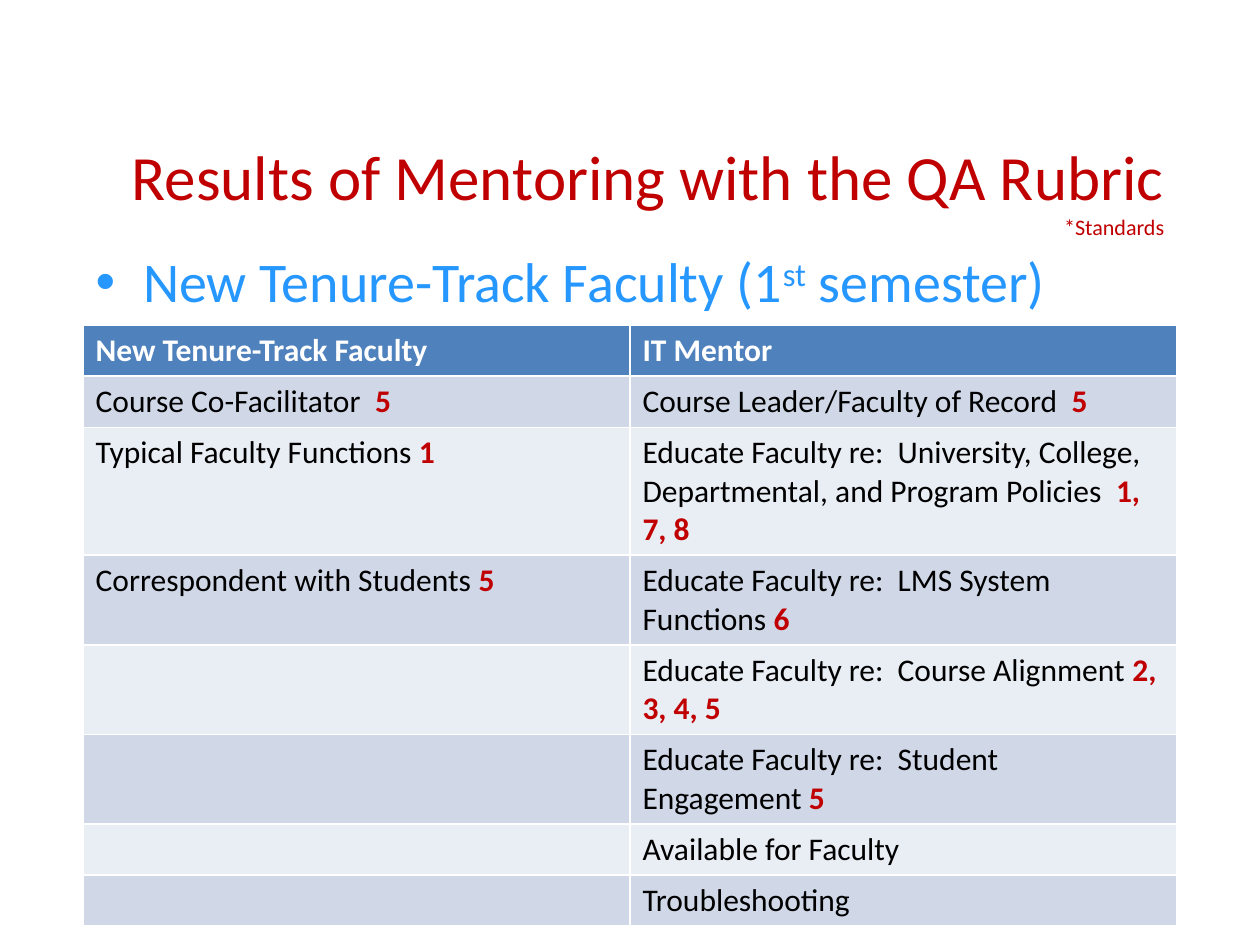
import dataclasses

import pptx
import pptx.dml.color
import pptx.enum.text
import pptx.oxml.ns
import pptx.util
from lxml import etree

Inches = pptx.util.Inches


@dataclasses.dataclass(frozen=True)
class Theme:
    """Colours, font and type sizes of the slide."""

    font: str = "Calibri"
    accent: str = "C00000"
    bullet: str = "2597FF"
    header: str = "4F81BD"
    header_text: str = "FFFFFF"
    text: str = "000000"
    bands: tuple = ("D0D8E8", "E9EDF4")
    title_size: float = 36
    note_size: float = 12.6
    body_size: float = 32
    table_size: float = 18


def add_text(para, text, *, font, size, color, bold=False, baseline=0):
    """Add one formatted span to a paragraph."""
    span = para.add_run()
    span.text = text
    span.font.name = font
    span.font.size = pptx.util.Pt(size)
    span.font.bold = bold
    span.font.color.rgb = pptx.dml.color.RGBColor.from_string(color)
    if baseline:
        span.font._element.set("baseline", str(baseline * 1000))


class SlideBuilder:
    """Hold the theme and the current page, and add elements to it."""

    def __init__(self, page, theme):
        self.page = page
        self.theme = theme

    def place(self, box, left, top, width, height):
        """Position a placeholder and return its first paragraph."""
        box.left, box.top = Inches(left), Inches(top)
        box.width, box.height = Inches(width), Inches(height)
        box.text_frame.auto_size = pptx.enum.text.MSO_AUTO_SIZE.NONE
        return box.text_frame.paragraphs[0]

    def title(self, text, note, area):
        """Fill the title with a heading and a small note below it."""
        theme = self.theme
        style = {"font": theme.font, "color": theme.accent}
        para = self.place(self.page.shapes.title, *area)
        para.alignment = pptx.enum.text.PP_ALIGN.RIGHT
        add_text(para, text, size=theme.title_size, **style)
        para.add_line_break()
        etree.SubElement(para._p[-1], pptx.oxml.ns.qn("a:rPr"), sz=str(theme.title_size * 100))
        add_text(para, note, size=theme.note_size, **style)

    def bullet(self, spans, area):
        """Fill the body with one bullet made of (text, baseline) spans."""
        theme = self.theme
        para = self.place(self.page.placeholders[1], *area)
        para.space_before = pptx.util.Pt(0)
        for text, baseline in spans:
            add_text(para, text, font=theme.font, size=theme.body_size,
                     color=theme.bullet, baseline=baseline)

    def cell(self, cell, fill, spans):
        """Fill a cell and write its (text, color, bold) spans."""
        cell.fill.solid()
        cell.fill.fore_color.rgb = pptx.dml.color.RGBColor.from_string(fill)
        para = cell.text_frame.paragraphs[0]
        for text, color, bold in spans:
            if text:
                add_text(para, text, font=self.theme.font, size=self.theme.table_size,
                         color=color, bold=bold)

    def table(self, headings, rows, heights, area):
        """Add a banded table whose cells are (text, standards) pairs."""
        theme = self.theme
        grid = self.page.shapes.add_table(
            len(rows) + 1, len(headings), *map(Inches, area)).table
        for row, height in zip(grid.rows, heights):
            row.height = Inches(height)
        for column, heading in enumerate(headings):
            self.cell(grid.cell(0, column), theme.header, [(heading, theme.header_text, True)])
        for index, row in enumerate(rows):
            fill = theme.bands[index % 2]
            for column, (text, standards) in enumerate(row):
                self.cell(grid.cell(index + 1, column), fill,
                          [(text, theme.text, False), (standards, theme.accent, True)])


HEADINGS = ("New Tenure-Track Faculty", "IT Mentor")
EMPTY = ("", "")
ROWS = [
    (("Course Co-Facilitator  ", "5"), ("Course Leader/Faculty of Record  ", "5")),
    (("Typical Faculty Functions ", "1"),
     ("Educate Faculty re:  University, College, Departmental, and Program Policies  ", "1, 7, 8")),
    (("Correspondent with Students ", "5"), ("Educate Faculty re:  LMS System Functions ", "6")),
    (EMPTY, ("Educate Faculty re:  Course Alignment ", "2, 3, 4, 5")),
    (EMPTY, ("Educate Faculty re:  Student Engagement ", "5")),
    (EMPTY, ("Available for Faculty", "")),
    (EMPTY, ("Troubleshooting", "")),
]
HEIGHTS = (0.35, 0.35, 0.7, 0.62, 0.3, 0.62, 0.37, 0.37)
LEFT, WIDTH = 0.66, 8.68


def main():
    """Build the slide and save it."""
    deck = pptx.Presentation()
    deck.slide_width, deck.slide_height = Inches(10), Inches(7.5)
    builder = SlideBuilder(deck.slides.add_slide(deck.slide_layouts[1]), Theme())
    builder.title("Results of Mentoring with the QA Rubric", "*Standards",
                  (LEFT, 1.08, WIDTH, 0.84))
    builder.bullet([("New Tenure-Track Faculty (1", 0), ("st", 30), (" semester)", 0)],
                   (LEFT, 1.91, WIDTH, 5.01))
    builder.table(HEADINGS, ROWS, HEIGHTS, (LEFT, 2.58, WIDTH, sum(HEIGHTS)))
    deck.save("out.pptx")


if __name__ == "__main__":
    main()
